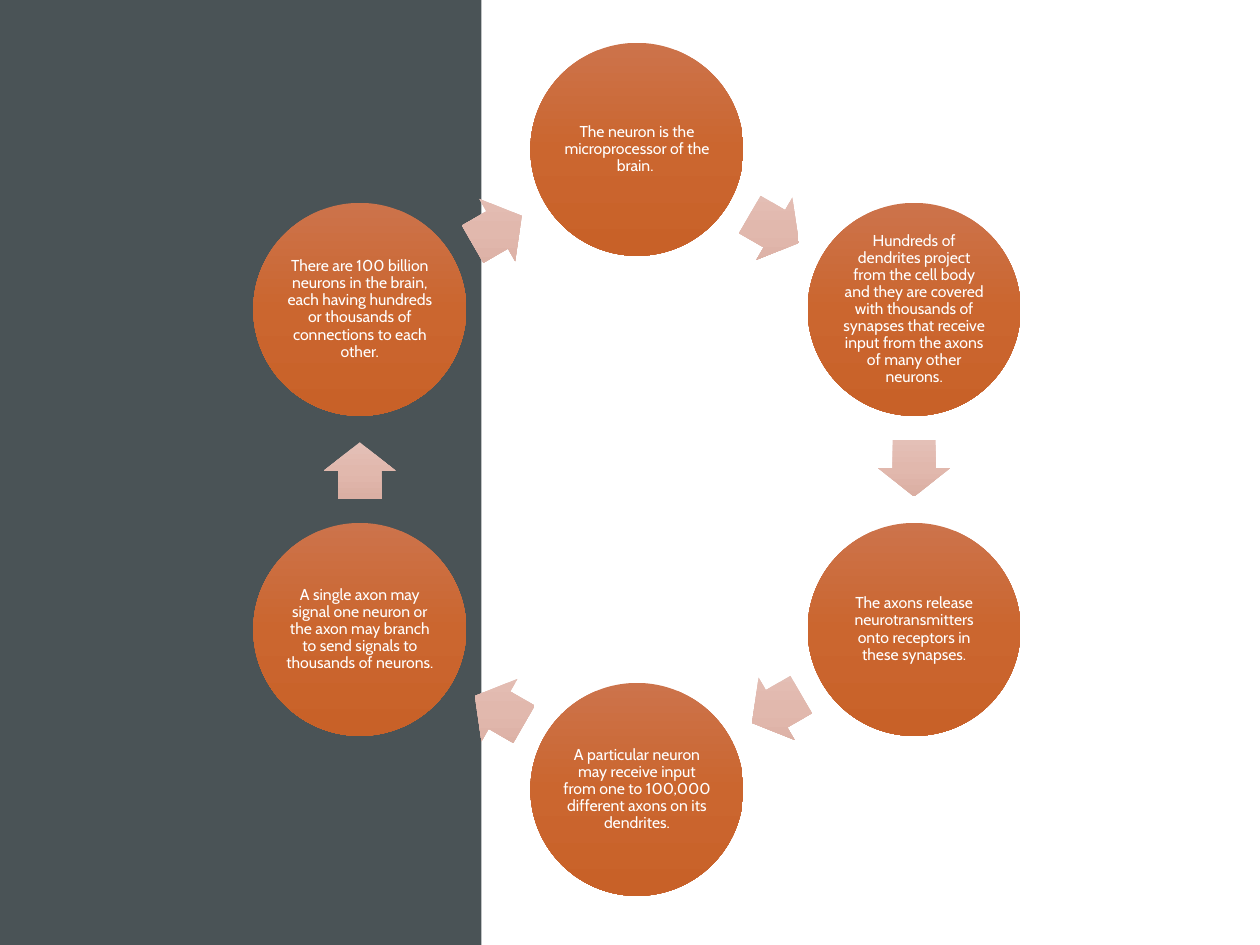
from dataclasses import dataclass
from math import cos, radians, sin

from pptx import Presentation
from pptx.dml.color import RGBColor
from pptx.enum.shapes import MSO_SHAPE as Preset
from pptx.enum.text import MSO_ANCHOR as Anchor, PP_ALIGN as Align
from pptx.oxml import parse_xml
from pptx.oxml.ns import nsdecls, qn
from pptx.util import Inches, Pt

SLIDE_W, SLIDE_H = 10, 7.5
PANEL_SHARE = 0.38
CENTER_X, CENTER_Y = 0.5055 * SLIDE_W, 0.4967 * SLIDE_H
RING_RADIUS = 0.254 * SLIDE_W
CIRCLE_SIZE = 0.169 * SLIDE_W
ARROW_W, ARROW_H = 0.045 * SLIDE_W, 0.076 * SLIDE_H
ARROW_SETBACK = 0.01

PANEL = ("4A5356",)
CIRCLE = ("CC734B", "CB662F", "C86128")
ARROW = ("E4C0B7", "E1B8AD", "DBAFA3")

FRAME_FORMAT = dict(
    word_wrap=True, vertical_anchor=Anchor.MIDDLE,
    margin_left=Inches(0.01), margin_right=Inches(0.01),
    margin_top=Inches(0.01), margin_bottom=Inches(0.01),
)
PARAGRAPH_FORMAT = dict(alignment=Align.CENTER, line_spacing=0.9)
FONT_FORMAT = dict(name="Cabin", size=Pt(9))


@dataclass
class Step:
    fact: str
    angle: float


FACTS = (
    "The neuron is the microprocessor of the brain. ",
    "Hundreds of dendrites project from the cell body and they are covered with "
    "thousands of synapses that receive input from the axons of many other neurons.",
    "The axons release neurotransmitters onto receptors in these synapses.",
    "A particular neuron may receive input from one to 100,000 different axons "
    "on its dendrites.",
    "A single axon may signal one neuron or the axon may branch to send signals "
    "to thousands of neurons.",
    "There are 100 billion neurons in the brain, each having hundreds or thousands "
    "of connections to each other.",
)
TURN = 360 / len(FACTS)
STEPS = [Step(fact, -90 + TURN * i) for i, fact in enumerate(FACTS)]


def apply_format(target, values: dict) -> None:
    for key, value in values.items():
        setattr(target, key, value)


def paint(shape, colors: tuple[str, ...]) -> None:
    shape.shadow.inherit = False
    shape.line.fill.background()
    if len(colors) == 1:
        shape.fill.solid()
        shape.fill.fore_color.rgb = RGBColor.from_string(colors[0])
        return
    gap = 100000 // (len(colors) - 1)
    stops = "".join(
        f'<a:gs pos="{i * gap}"><a:srgbClr val="{color}"/></a:gs>'
        for i, color in enumerate(colors)
    )
    gradient = parse_xml(
        f'<a:gradFill {nsdecls("a")} rotWithShape="0"><a:gsLst>{stops}</a:gsLst>'
        '<a:lin ang="5400000" scaled="0"/></a:gradFill>'
    )
    shape._element.spPr.find(qn("a:prstGeom")).addnext(gradient)


def add_centered(shapes, preset, x: float, y: float, w: float, h: float,
                 colors: tuple[str, ...]):
    box = (x - w / 2, y - h / 2, w, h)
    shape = shapes.add_shape(preset, *(Inches(length) for length in box))
    paint(shape, colors)
    return shape


def on_ring(angle: float, radius: float) -> tuple[float, float]:
    turn = radians(angle)
    return CENTER_X + radius * cos(turn), CENTER_Y + radius * sin(turn)


def add_circle(shapes, step: Step) -> None:
    circle = add_centered(shapes, Preset.OVAL, *on_ring(step.angle, RING_RADIUS),
                          CIRCLE_SIZE, CIRCLE_SIZE, CIRCLE)
    frame = circle.text_frame
    apply_format(frame, FRAME_FORMAT)
    paragraph = frame.paragraphs[0]
    apply_format(paragraph, PARAGRAPH_FORMAT)
    run = paragraph.add_run()
    run.text = step.fact
    apply_format(run.font, FONT_FORMAT)
    run.font.color.rgb = RGBColor.from_string("FFFFFF")


def add_arrow(shapes, step: Step) -> None:
    middle = step.angle + TURN / 2
    heading = middle + 90
    x, y = on_ring(middle, RING_RADIUS * cos(radians(TURN / 2)))
    x -= ARROW_SETBACK * cos(radians(heading))
    y -= ARROW_SETBACK * sin(radians(heading))
    arrow = add_centered(shapes, Preset.RIGHT_ARROW, x, y, ARROW_W, ARROW_H, ARROW)
    arrow.adjustments[0], arrow.adjustments[1] = 0.6, 0.5
    arrow.rotation = heading


def main() -> None:
    deck = Presentation()
    deck.slide_width, deck.slide_height = Inches(SLIDE_W), Inches(SLIDE_H)
    slide = deck.slides.add_slide(deck.slide_layouts[6])
    panel_width = PANEL_SHARE * SLIDE_W + 0.02
    add_centered(slide.shapes, Preset.RECTANGLE, panel_width / 2, SLIDE_H / 2,
                 panel_width, SLIDE_H, PANEL)
    cycle = slide.shapes.add_group_shape()
    for step in STEPS:
        add_circle(cycle.shapes, step)
        add_arrow(cycle.shapes, step)
    deck.save("out.pptx")


if __name__ == "__main__":
    main()
